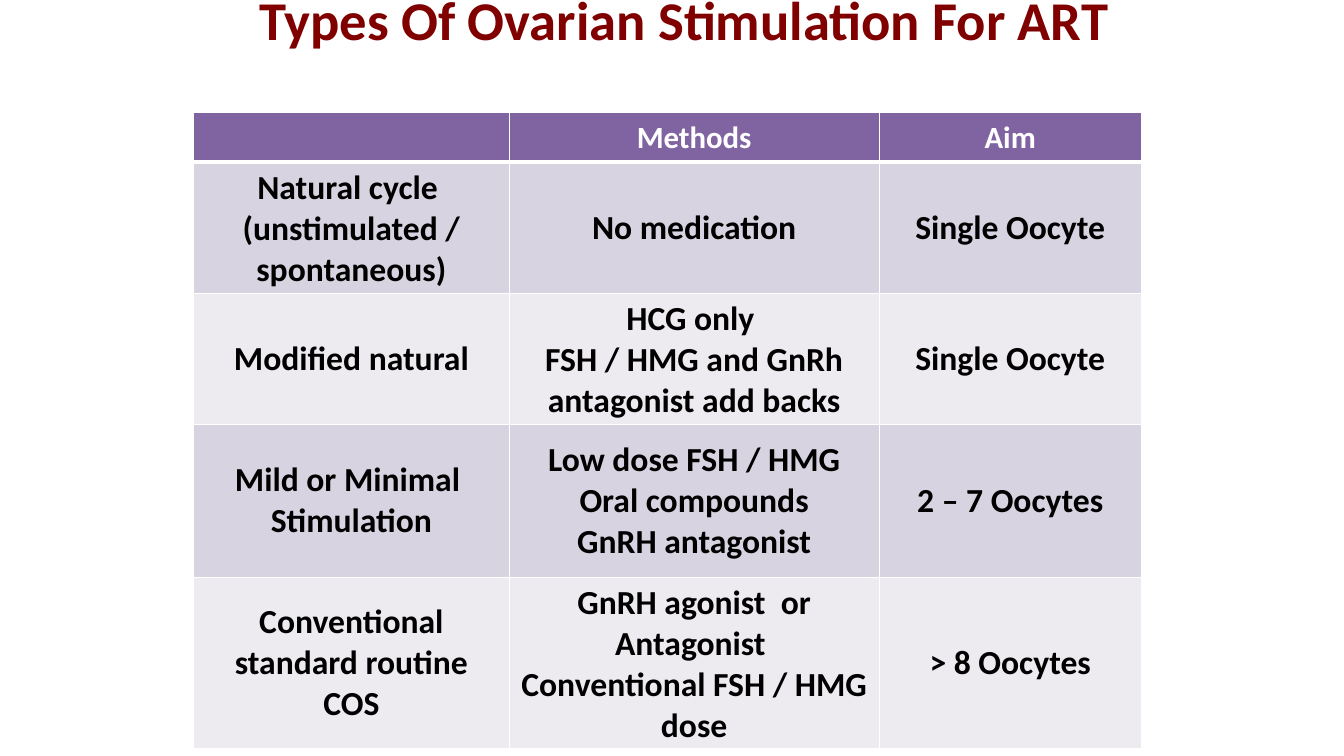
from lxml import etree
from pptx import Presentation
from pptx.dml.color import RGBColor
from pptx.enum.text import MSO_ANCHOR as Anchor, PP_ALIGN as Align
from pptx.oxml.ns import qn
from pptx.util import Inches, Pt

FONT = "Calibri"
TITLE_RED, PURPLE = "800000", "8064A2"
BANDS = ("D8D3E0", "EDEAF0")
WHITE, BLACK = "FFFFFF", "000000"
COLUMNS = (3.13, 3.67, 2.6)
ROWS = (0.49, 0.82, 1.17, 1.52, 1.17)
STIMULATION_TYPES = (
    ("", "Methods", "Aim"),
    ("Natural cycle \n(unstimulated / spontaneous)", "No medication", "Single Oocyte"),
    ("Modified natural", "HCG only \nFSH / HMG and GnRh antagonist add backs",
     "Single Oocyte"),
    ("Mild or Minimal \nStimulation",
     "Low dose FSH / HMG\nOral compounds\nGnRH antagonist", "2 – 7 Oocytes"),
    ("Conventional standard routine COS",
     "GnRH agonist  or Antagonist \nConventional FSH / HMG dose", "> 8 Oocytes"),
)


def rgb(color):
    return RGBColor.from_string(color)


def write(tf, text, size, color):
    tf.text = text
    for p in tf.paragraphs:
        p.alignment = Align.CENTER
        for r in p.runs:
            r.font.name, r.font.size, r.font.bold = FONT, Pt(size), True
            r.font.color.rgb = rgb(color)


def add_borders(cell, bottom):
    """Draw white borders; must run before the cell is filled."""
    tcPr = cell._tc.get_or_add_tcPr()
    for side, width in (("L", 1), ("R", 1), ("T", 1), ("B", bottom)):
        ln = etree.SubElement(tcPr, qn(f"a:ln{side}"), w=str(Pt(width)))
        fill = etree.SubElement(ln, qn("a:solidFill"))
        etree.SubElement(fill, qn("a:srgbClr"), val=WHITE)


def add_title(s, box, text):
    tf = s.shapes.add_textbox(*map(Inches, box)).text_frame
    tf.word_wrap = True
    tf.vertical_anchor = Anchor.TOP
    write(tf, text, 39, TITLE_RED)


def add_types_table(s, left, top):
    table = s.shapes.add_table(
        len(ROWS), len(COLUMNS), Inches(left), Inches(top),
        Inches(sum(COLUMNS)), Inches(sum(ROWS))).table
    for column, width in zip(table.columns, COLUMNS):
        column.width = Inches(width)
    for i, (row, height, texts) in enumerate(zip(table.rows, ROWS, STIMULATION_TYPES)):
        row.height = Inches(height)
        header = i == 0
        for cell, text in zip(row.cells, texts):
            add_borders(cell, 3 if header else 1)
            cell.fill.solid()
            cell.fill.fore_color.rgb = rgb(PURPLE if header else BANDS[(i - 1) % 2])
            cell.vertical_anchor = Anchor.MIDDLE
            write(cell.text_frame, text, 22 if header else 24,
                  WHITE if header else BLACK)


def main():
    prs = Presentation()
    prs.slide_width, prs.slide_height = Inches(13.33), Inches(7.5)
    s = prs.slides.add_slide(prs.slide_layouts[6])
    add_title(s, (2.11, -0.19, 9.35, 1.34), "Types Of Ovarian Stimulation For ART")
    add_types_table(s, 1.92, 1.12)
    prs.save("out.pptx")


if __name__ == "__main__":
    main()
